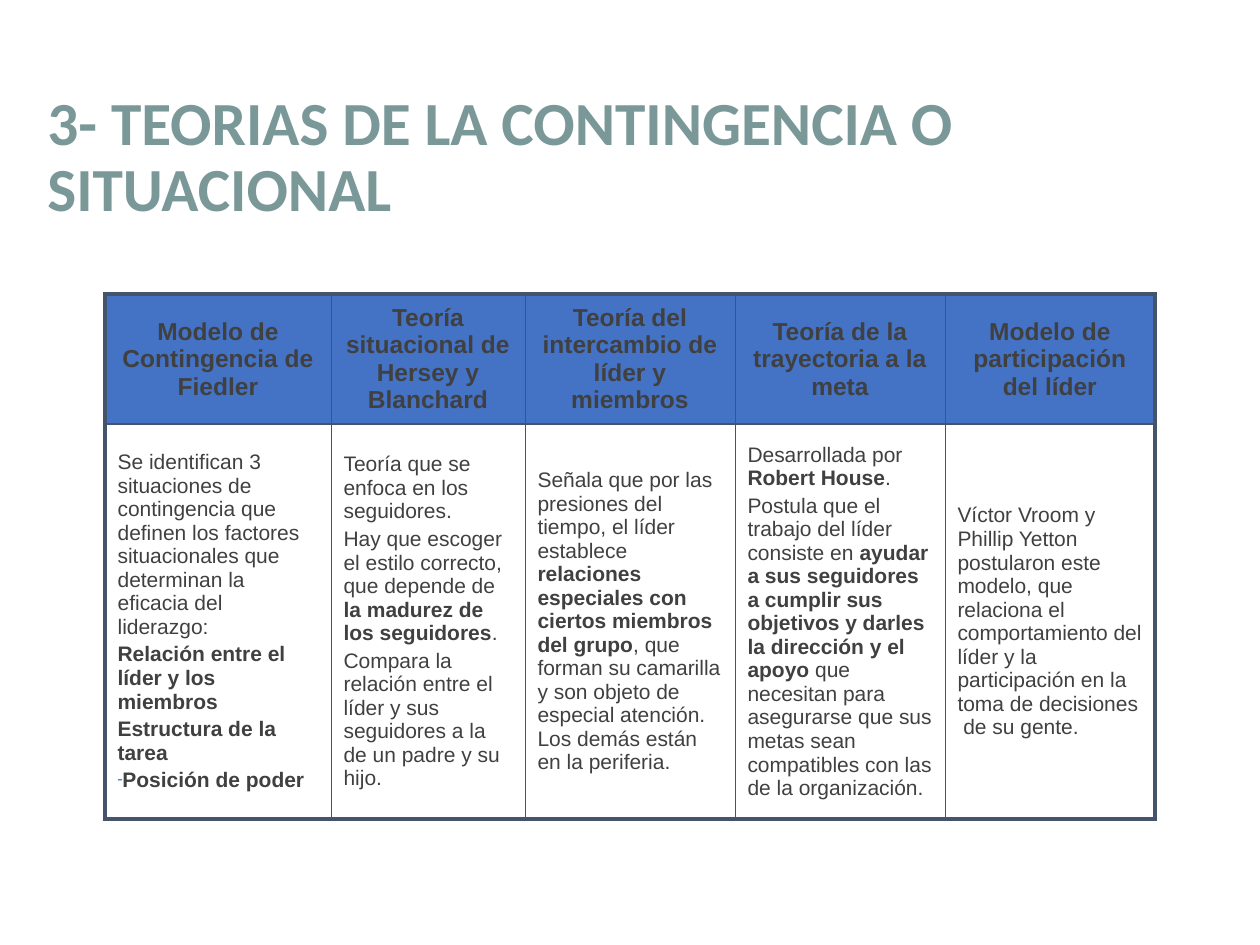
from lxml.etree import SubElement
from pptx import Presentation
from pptx.dml.color import RGBColor
from pptx.enum.text import MSO_ANCHOR, PP_ALIGN
from pptx.oxml import parse_xml
from pptx.oxml.ns import nsdecls, qn
from pptx.util import Emu, Pt

SCALE = 914400 / 126
COLS = [226, 194, 210, 210, 210]
ROWS = [130, 395]
BLUE, NAVY, GREY, SAGE = "4472C4", "44546A", "404040", "7B9899"
HEADS = [
    "Modelo de Contingencia de Fiedler",
    "Teoría situacional de Hersey y Blanchard",
    "Teoría del intercambio de líder y miembros",
    "Teoría de la trayectoria a la meta",
    "Modelo de participación del líder",
]
BODY = [
    ["Se identifican 3 situaciones de contingencia que definen los factores "
     "situacionales que determinan la eficacia del liderazgo:",
     "*Relación entre el líder y los miembros*",
     "*Estructura de la tarea*",
     "-*Posición de poder*"],
    ["Teoría que se enfoca en los seguidores.",
     "Hay que escoger el estilo correcto, que depende de "
     "*la madurez de los seguidores*.",
     "Compara la relación entre el líder y sus seguidores a la de un padre y su hijo."],
    ["Señala que por las presiones del tiempo, el líder establece "
     "*relaciones especiales con ciertos miembros del grupo*, que forman su "
     "camarilla y son objeto de especial atención. Los demás están en la periferia."],
    ["Desarrollada por *Robert House*.",
     "Postula que el trabajo del líder consiste en *ayudar a sus seguidores a "
     "cumplir sus objetivos y darles la dirección y el apoyo* que necesitan para "
     "asegurarse que sus metas sean compatibles con las de la organización."],
    ["Víctor Vroom y Phillip Yetton postularon este modelo, que relaciona el "
     "comportamiento del líder y la participación en la toma de decisiones "
     " de su gente."],
]


def px(num):
    """Turn px into EMU."""
    return Emu(round(num * SCALE))


def paint(hue):
    """Turn a hex string into a colour."""
    return RGBColor.from_string(hue)


def style(para, size, face, hue):
    """Set the font that all runs of a paragraph share."""
    font = para.font
    font.size, font.name = Pt(size), face
    font.color.rgb = paint(hue)


def dash(para):
    """Give a paragraph a small blue dash as its bullet."""
    props = para._p.get_or_add_pPr()
    props.set("marL", "0")
    props.set("indent", "0")
    tint = SubElement(props, qn("a:buClr"))
    SubElement(tint, qn("a:srgbClr"), val=BLUE)
    SubElement(props, qn("a:buSzPct"), val="70000")
    SubElement(props, qn("a:buChar"), char="-")


def write(frame, lines, size, align):
    """Write paragraphs in which stars enclose bold text."""
    for i, line in enumerate(lines):
        para = frame.add_paragraph() if i else frame.paragraphs[0]
        para.alignment = align
        para.space_before = Pt(size * 0.2)
        if line.startswith("-"):
            dash(para)
            line = line[1:]
        style(para, size, "Arial", GREY)
        for j, part in enumerate(line.split("*")):
            if part:
                run = para.add_run()
                run.text = part
                run.font.bold = j % 2 == 1


def edge(cell, sides):
    """Draw cell borders from widths in points, keyed by side."""
    props = cell._tc.get_or_add_tcPr()
    for i, (side, width) in enumerate(sides.items()):
        props.insert(i, parse_xml(
            f'<a:ln{side} {nsdecls("a")} w="{Pt(width)}"><a:solidFill>'
            f'<a:srgbClr val="{NAVY}"/></a:solidFill></a:ln{side}>'))


def title(slide, x, y, w, h):
    """Place the heading in its box."""
    frame = slide.shapes.add_textbox(px(x), px(y), px(w), px(h)).text_frame
    frame.word_wrap = True
    frame.vertical_anchor = MSO_ANCHOR.MIDDLE
    para = frame.paragraphs[0]
    para.text = "3- TEORIAS DE LA CONTINGENCIA O SITUACIONAL"
    para.line_spacing = 0.9
    style(para, 35, "Calibri", SAGE)
    para.font.bold = True


def grid(slide, x, y):
    """Place the table of theories with its corner at x, y."""
    table = slide.shapes.add_table(
        len(ROWS), len(COLS), px(x), px(y), px(sum(COLS)), px(sum(ROWS))).table
    table.horz_banding = False
    for row, high in zip(table.rows, ROWS):
        row.height = px(high)
    last = len(COLS) - 1
    for c, wide in enumerate(COLS):
        table.columns[c].width = px(wide)
        head, body = table.cell(0, c), table.cell(1, c)
        head.fill.solid()
        head.fill.fore_color.rgb = paint(BLUE)
        body.fill.background()
        write(head.text_frame, [f"*{HEADS[c]}*"], 14, PP_ALIGN.CENTER)
        write(body.text_frame, BODY[c], 12, PP_ALIGN.LEFT)
        left = 0.25 if c else 2.25
        right = 0.25 if c < last else 2.25
        for cell, top, base in ((head, 2.25, 1), (body, 1, 2.25)):
            cell.vertical_anchor = MSO_ANCHOR.MIDDLE
            edge(cell, {"L": left, "R": right, "T": top, "B": base})


def main():
    """Build and save the slide."""
    deck = Presentation()
    deck.slide_width, deck.slide_height = px(1260), px(945)
    slide = deck.slides.add_slide(deck.slide_layouts[6])
    grid(slide, 105, 294)
    title(slide, 35, 76, 1191, 165)
    deck.save("out.pptx")


if __name__ == "__main__":
    main()
